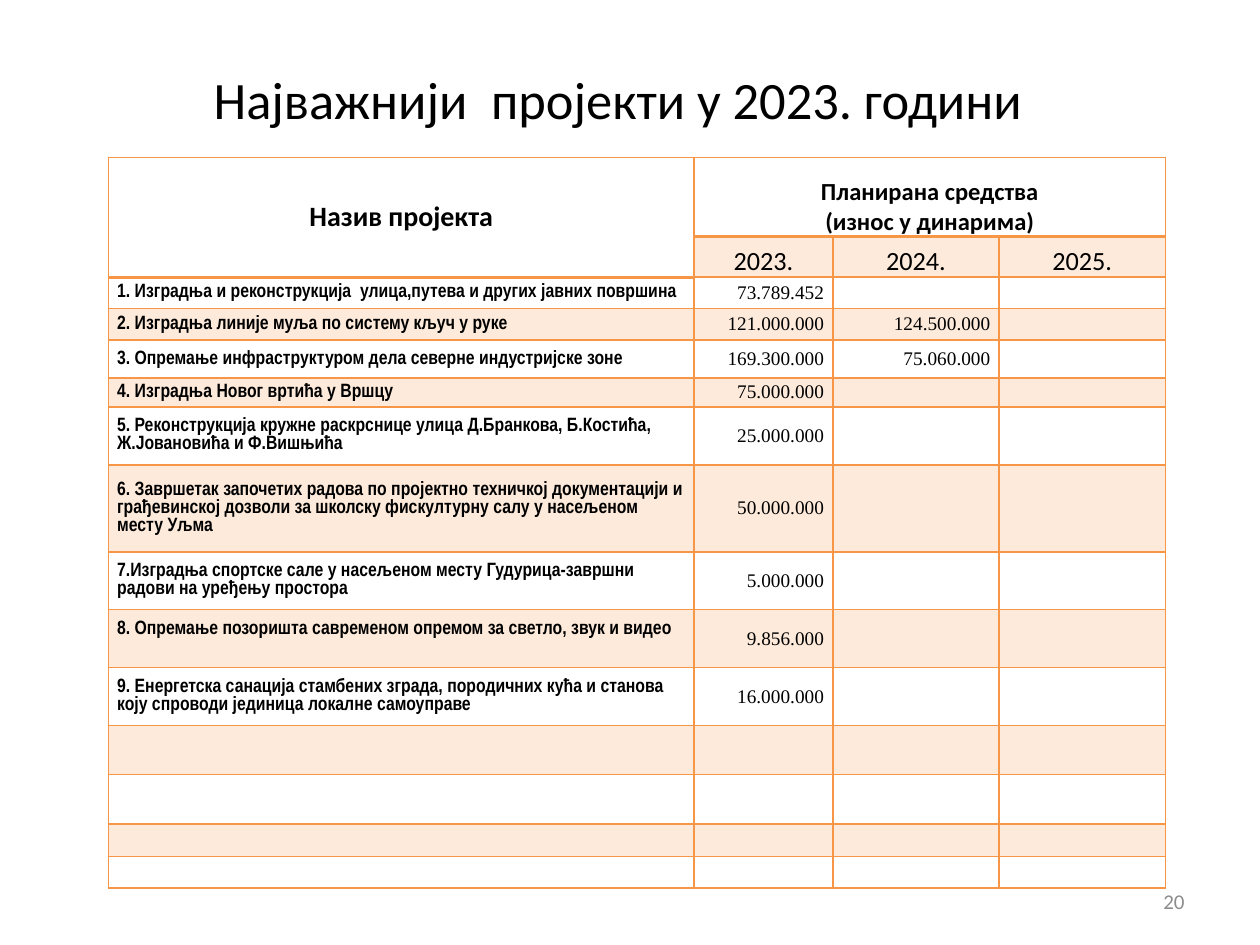
from dataclasses import dataclass

from lxml import etree
from pptx import Presentation
from pptx.dml.color import RGBColor
from pptx.enum.text import MSO_ANCHOR, PP_ALIGN
from pptx.oxml.ns import qn
from pptx.util import Inches, Pt

LEFT, CENTER, RIGHT = PP_ALIGN.LEFT, PP_ALIGN.CENTER, PP_ALIGN.RIGHT
MIDDLE, BOTTOM = MSO_ANCHOR.MIDDLE, MSO_ANCHOR.BOTTOM

GRID_COLUMNS, GRID_ROWS = 100, 75
COLUMN_WIDTHS = [46.5, 11, 13.2, 13.2]
ROW_HEIGHTS = [6.3, 3.2, 2.5, 2.5, 3, 2.3, 4.6, 6.9, 4.6, 4.6, 4.6, 3.9, 3.9, 2.6, 2.5]
YEARS = ["2023.", "2024.", "2025."]
HEADER_ROWS = 2
PROJECTS = [
    ("1. Изградња и реконструкција  улица,путева и других јавних површина", "73.789.452"),
    ("2. Изградња линије муља по систему кључ у руке", "121.000.000", "124.500.000"),
    ("3. Опремање инфраструктуром дела северне индустријске зоне", "169.300.000", "75.060.000"),
    ("4. Изградња Новог вртића у Вршцу", "75.000.000"),
    ("5. Реконструкција кружне раскрснице улица Д.Бранкова, Б.Костића, "
     "Ж.Јовановића и Ф.Вишњића", "25.000.000"),
    ("6. Завршетак започетих радова по пројектно техничкој документацији и "
     "грађевинској дозволи за школску фискултурну салу у насељеном месту Уљма", "50.000.000"),
    ("7.Изградња спортске сале у насељеном месту Гудурица-завршни радови "
     "на уређењу простора", "5.000.000"),
    ("8. Опремање позоришта савременом опремом за светло, звук и видео", "9.856.000"),
    ("9. Енергетска санација стамбених зграда, породичних кућа и станова "
     "коју спроводи јединица локалне самоуправе", "16.000.000"),
]
RAISED_PROJECT = 7


@dataclass(frozen=True)
class Theme:
    text: str = "000000"
    muted: str = "8C8C8C"
    accent: str = "F79646"
    band_opacity: int = 20
    main_font: str = "Calibri"
    name_font: str = "Arial Narrow"
    amount_font: str = "Times New Roman"
    title_size: int = 30
    heading_size: int = 16
    subheading_size: int = 14
    year_size: int = 15
    body_size: int = 11
    footer_size: int = 12
    line: int = 1
    heavy_line: int = 2


def write(frame, text, *, font, size, color, bold=False, align=LEFT):
    frame.word_wrap = True
    for index, line in enumerate(text.split("\n")):
        paragraph = frame.add_paragraph() if index else frame.paragraphs[0]
        paragraph.alignment = align
        run = paragraph.add_run()
        run.text = line
        run.font.name = font
        run.font.size = Pt(size)
        run.font.bold = bold
        run.font.color.rgb = RGBColor.from_string(color)


class SlideBuilder:
    def __init__(self, presentation, theme):
        self.theme = theme
        self.width = presentation.slide_width
        self.height = presentation.slide_height
        self.slide = presentation.slides.add_slide(presentation.slide_layouts[5])

    def across(self, columns):
        return round(self.width * columns / GRID_COLUMNS)

    def down(self, rows):
        return round(self.height * rows / GRID_ROWS)

    def area(self, left, top, width, height):
        return self.across(left), self.down(top), self.across(width), self.down(height)

    def title(self, text, *area):
        shape = self.slide.shapes.title
        shape.left, shape.top, shape.width, shape.height = self.area(*area)
        shape.text_frame.vertical_anchor = MIDDLE
        write(shape.text_frame, text, font=self.theme.main_font,
              size=self.theme.title_size, color=self.theme.text, align=CENTER)

    def page_number(self, text, *area):
        frame = self.slide.shapes.add_textbox(*self.area(*area)).text_frame
        frame.vertical_anchor = MIDDLE
        write(frame, text, font=self.theme.main_font, size=self.theme.footer_size,
              color=self.theme.muted, align=RIGHT)

    def table(self, left, top):
        area = self.area(left, top, sum(COLUMN_WIDTHS), sum(ROW_HEIGHTS))
        table = self.slide.shapes.add_table(len(ROW_HEIGHTS), len(COLUMN_WIDTHS), *area).table
        table.first_row = table.horz_banding = False
        for column, width in zip(table.columns, COLUMN_WIDTHS):
            column.width = self.across(width)
        for row, height in zip(table.rows, ROW_HEIGHTS):
            row.height = self.down(height)
        for row in range(len(ROW_HEIGHTS)):
            for column in range(len(COLUMN_WIDTHS)):
                self.style_cell(table.cell(row, column), row, column)
        table.cell(0, 0).merge(table.cell(1, 0))
        table.cell(0, 1).merge(table.cell(0, 3))
        return table

    def style_cell(self, cell, row, column):
        cell.margin_left = cell.margin_right = Inches(0.07)
        cell.margin_top = cell.margin_bottom = 0
        cell.vertical_anchor = MIDDLE
        if row % 2 and (row, column) != (1, 0):
            self.tint(cell)
        else:
            cell.fill.background()
        heavy_top = (row == 1 and column > 0) or (row, column) == (2, 0)
        heavy_bottom = row == 0 or (row, column) == (1, 0)
        self.border(cell, {"L": False, "R": False, "T": heavy_top, "B": heavy_bottom})
        end = etree.SubElement(cell.text_frame.paragraphs[0]._p, qn("a:endParaRPr"))
        end.set("sz", str(self.theme.body_size * 100))

    def tint(self, cell):
        cell.fill.solid()
        cell.fill.fore_color.rgb = RGBColor.from_string(self.theme.accent)
        color = cell._tc.tcPr.find(".//" + qn("a:srgbClr"))
        etree.SubElement(color, qn("a:alpha"), val=str(self.theme.band_opacity * 1000))

    def border(self, cell, heavy_sides):
        for position, (side, heavy) in enumerate(heavy_sides.items()):
            width = self.theme.heavy_line if heavy else self.theme.line
            line = etree.Element(qn("a:ln" + side), w=str(Pt(width)))
            fill = etree.SubElement(line, qn("a:solidFill"))
            etree.SubElement(fill, qn("a:srgbClr"), val=self.theme.accent)
            cell._tc.tcPr.insert(position, line)

    def heading(self, cell, text, size, anchor=BOTTOM, bold=True):
        cell.vertical_anchor = anchor
        write(cell.text_frame, text, font=self.theme.main_font, size=size,
              color=self.theme.text, bold=bold, align=CENTER)

    def project(self, table, row, name, *amounts):
        body = {"size": self.theme.body_size, "color": self.theme.text}
        write(table.cell(row, 0).text_frame, name, font=self.theme.name_font,
              bold=True, **body)
        for column, amount in enumerate(amounts, 1):
            write(table.cell(row, column).text_frame, amount,
                  font=self.theme.amount_font, align=RIGHT, **body)


def main():
    presentation = Presentation()
    presentation.slide_width, presentation.slide_height = Inches(10), Inches(7.5)
    theme = Theme()
    builder = SlideBuilder(presentation, theme)
    table = builder.table(8.6, 12.5)
    builder.heading(table.cell(0, 0), "Назив пројекта", theme.heading_size, MIDDLE)
    builder.heading(table.cell(0, 1), "Планирана средства\n(износ у динарима)",
                    theme.subheading_size)
    for column, year in enumerate(YEARS, 1):
        builder.heading(table.cell(1, column), year, theme.year_size, bold=False)
    for row, project in enumerate(PROJECTS, HEADER_ROWS):
        builder.project(table, row, *project)
    table.cell(HEADER_ROWS + RAISED_PROJECT, 0).margin_bottom = Inches(0.14)
    builder.page_number("20", 71.7, 69.5, 23.3, 4)
    builder.title("Најважнији  пројекти у 2023. години  ", 5, 3, 90, 9.6)
    presentation.save("out.pptx")


if __name__ == "__main__":
    main()
